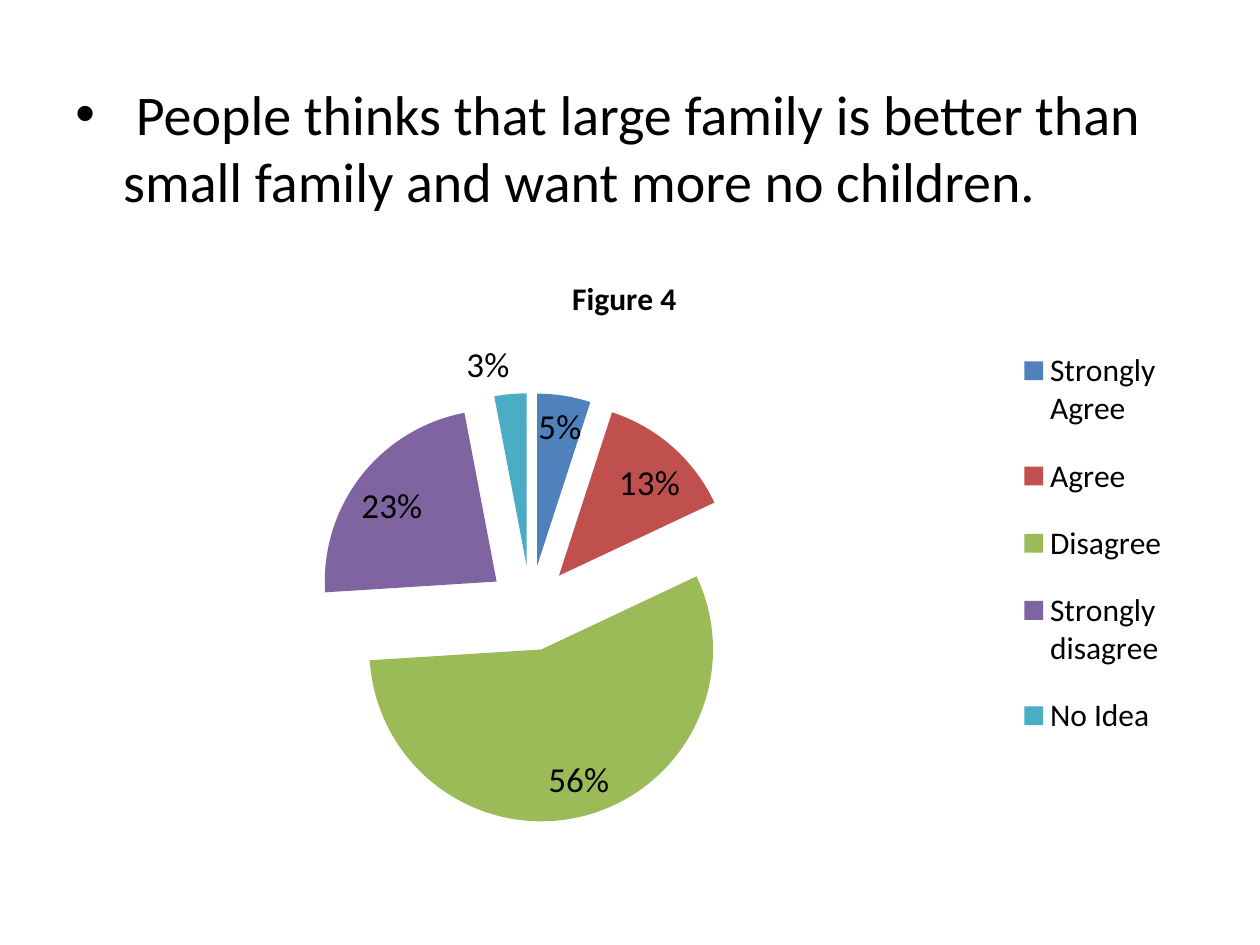
from dataclasses import dataclass

from lxml import etree
from pptx import Presentation
from pptx.chart.data import CategoryChartData
from pptx.dml.color import RGBColor
from pptx.enum.chart import XL_CHART_TYPE, XL_LABEL_POSITION, XL_LEGEND_POSITION
from pptx.oxml import parse_xml
from pptx.oxml.ns import nsdecls, qn
from pptx.util import Emu, Pt

PIE = XL_CHART_TYPE.PIE
BEST_FIT = XL_LABEL_POSITION.BEST_FIT
LEGEND_RIGHT = XL_LEGEND_POSITION.RIGHT
EMU_PER_PX = 9144  # 100 px to the inch


@dataclass(frozen=True)
class Theme:
    font: str = "Calibri"
    ink: str = "000000"
    statement_size: int = 32
    label_size: int = 20
    title_size: int = 18
    legend_size: int = 18


@dataclass(frozen=True)
class Box:
    left: int
    top: int
    width: int
    height: int

    def emu(self) -> tuple:
        return tuple(px(n) for n in (self.left, self.top, self.width, self.height))


@dataclass(frozen=True)
class Answer:
    name: str
    share: float
    color: str


THEME = Theme()
STATEMENT_BOX = Box(50, 58, 900, 650)
CHART_BOX = Box(58, 200, 875, 467)
PIE_BOX = Box(248, 314, 340, 340)
LEGEND_BOX = Box(802, 254, 131, 350)
HANGING_INDENT = 38
EXPLOSION = 25
FIGURE = "Figure 4"
STATEMENT = (" People thinks that large family is better than small family "
             "and want more no children.")
ANSWERS = [
    Answer("Strongly Agree", 0.05, "4F81BD"),
    Answer("Agree", 0.13, "C0504D"),
    Answer("Disagree", 0.56, "9BBB59"),
    Answer("Strongly disagree", 0.23, "8064A2"),
    Answer("No Idea", 0.03, "4BACC6"),
]


def px(n: int) -> Emu:
    return Emu(n * EMU_PER_PX)


def style(font, size: int, bold: bool = False) -> None:
    font.name = THEME.font
    font.size = Pt(size)
    font.bold = bold
    font.color.rgb = RGBColor.from_string(THEME.ink)


def add_statement(slide, text: str, box: Box) -> None:
    frame = slide.shapes.add_textbox(*box.emu()).text_frame
    frame.word_wrap = True
    paragraph = frame.paragraphs[0]
    run = paragraph.add_run()
    run.text = text
    style(run.font, THEME.statement_size)
    # Bullet with a hanging indent
    properties = paragraph._p.get_or_add_pPr()
    properties.set("marL", str(px(HANGING_INDENT)))
    properties.set("indent", str(-px(HANGING_INDENT)))
    spacing = etree.SubElement(properties, qn("a:spcBef"))
    etree.SubElement(spacing, qn("a:spcPct")).set("val", "20000")
    etree.SubElement(properties, qn("a:buFont")).set("typeface", "Arial")
    etree.SubElement(properties, qn("a:buChar")).set("char", "•")


def manual_layout(part: Box, chart: Box, inner: bool = False):
    """Place a chart part by its share of the chart's frame."""
    target = '<c:layoutTarget val="inner"/>' if inner else ""
    shares = {
        "x": (part.left - chart.left) / chart.width,
        "y": (part.top - chart.top) / chart.height,
        "w": part.width / chart.width,
        "h": part.height / chart.height,
    }
    modes = "".join(f'<c:{axis}Mode val="edge"/>' for axis in "xy")
    sizes = "".join(f'<c:{key} val="{share:.2f}"/>' for key, share in shares.items())
    return parse_xml(f'<c:layout {nsdecls("c")}><c:manualLayout>'
                     f"{target}{modes}{sizes}</c:manualLayout></c:layout>")


def add_answer_pie(slide, answers: list[Answer], box: Box) -> None:
    data = CategoryChartData(number_format="0%")
    data.categories = [answer.name for answer in answers]
    data.add_series(FIGURE, [answer.share for answer in answers])
    chart = slide.shapes.add_chart(PIE, *box.emu(), data).chart
    style(chart.font, THEME.legend_size)

    # Title
    chart.has_title = True
    title_run = chart.chart_title.text_frame.paragraphs[0].add_run()
    title_run.text = FIGURE
    style(title_run.font, THEME.title_size, bold=True)
    chart.chart_title.include_in_layout = False

    # Exploded slices
    plot = chart.plots[0]
    plot.vary_by_categories = True
    slices = plot.series[0]
    for index, answer in enumerate(answers):
        fill = slices.points[index].format.fill
        fill.solid()
        fill.fore_color.rgb = RGBColor.from_string(answer.color)
    explosion = parse_xml(f'<c:explosion {nsdecls("c")} val="{EXPLOSION}"/>')
    slices._element.find(qn("c:dPt")).addprevious(explosion)

    # Share labels
    labels = slices.data_labels
    labels.show_value = True
    labels.number_format = "0%"
    labels.number_format_is_linked = False
    labels.position = BEST_FIT
    style(labels.font, THEME.label_size)

    # Legend
    chart.has_legend = True
    legend = chart.legend
    legend.position = LEGEND_RIGHT
    legend.include_in_layout = False
    style(legend.font, THEME.legend_size)
    legend_xml = legend._element
    for old in legend_xml.findall(qn("c:layout")):
        legend_xml.remove(old)
    legend_xml.find(qn("c:legendPos")).addnext(manual_layout(LEGEND_BOX, box))

    # Pie position
    plot_area = chart._chartSpace.chart.plotArea
    for old in plot_area.findall(qn("c:layout")):
        plot_area.remove(old)
    plot_area.insert(0, manual_layout(PIE_BOX, box, inner=True))


def main() -> None:
    deck = Presentation()
    deck.slide_width, deck.slide_height = px(1000), px(750)
    slide = deck.slides.add_slide(deck.slide_layouts[6])
    add_statement(slide, STATEMENT, STATEMENT_BOX)
    add_answer_pie(slide, ANSWERS, CHART_BOX)
    deck.save("out.pptx")


if __name__ == "__main__":
    main()
